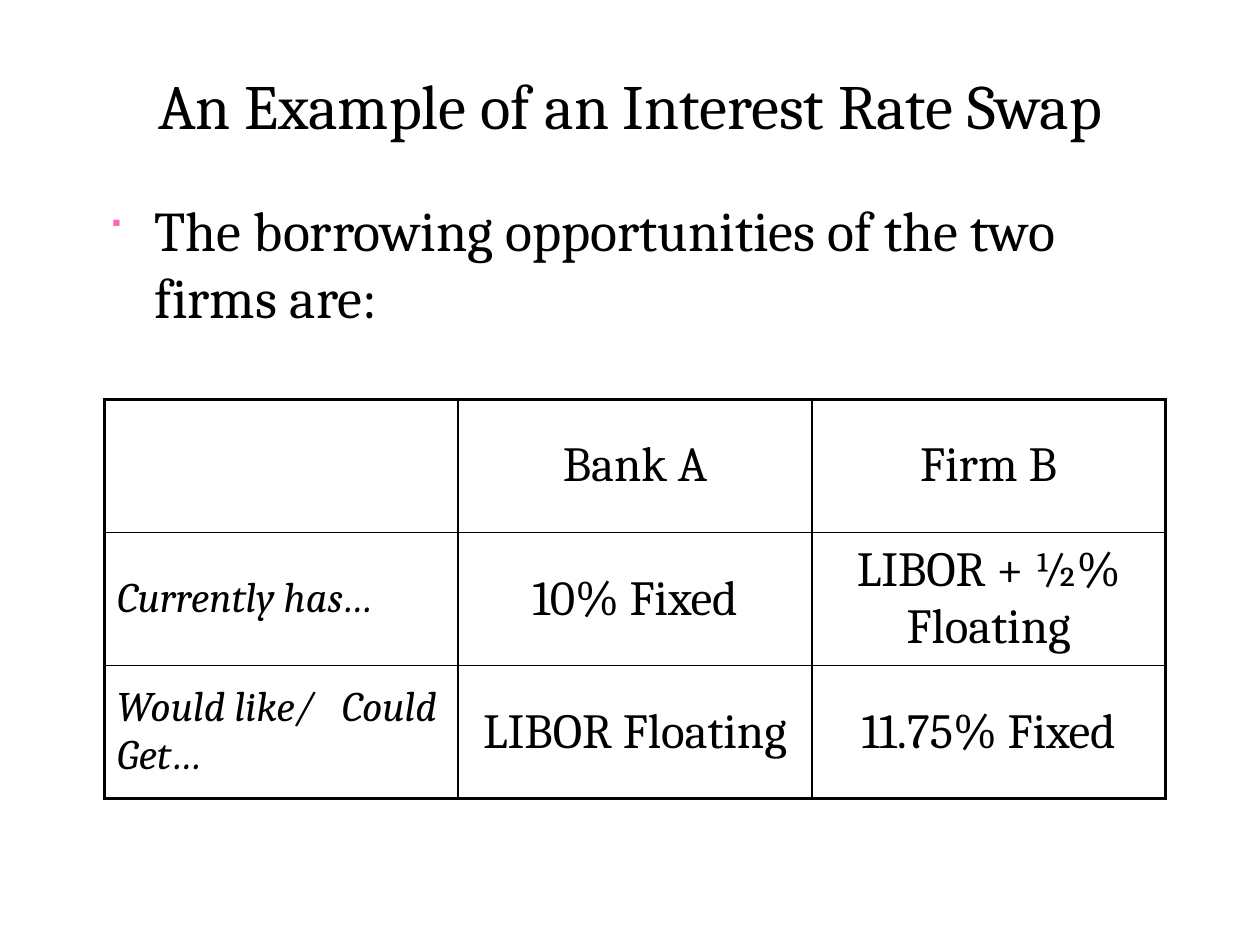
"""Build a slide showing the borrowing opportunities behind an interest rate swap."""
from lxml import etree
from pptx import Presentation
from pptx import util as u
from pptx.dml.color import RGBColor
from pptx.enum import text
from pptx.oxml import ns

COLORS = {"ink": "000000", "bullet": "FF63B1"}
ROWS = [
    ["", "Bank A", "Firm B"],
    ["Currently has…", "10% Fixed", "LIBOR + ½% Floating"],
    ["Would like/   Could Get…", "LIBOR Floating", "11.75% Fixed"],
]


def write(frame, wording, size, align=text.PP_ALIGN.LEFT, italic=False, before=0):
    paragraph = frame.paragraphs[0]
    paragraph.alignment = align
    paragraph.space_before = u.Pt(before)
    run = paragraph.add_run()
    run.text = wording
    run.font.name = "Cambria"
    run.font.size = u.Pt(size)
    run.font.italic = italic
    run.font.color.rgb = RGBColor.from_string(COLORS["ink"])
    return paragraph


def add_element(parent, tag, **attributes):
    return etree.SubElement(parent, ns.qn(tag), attributes)


presentation = Presentation()
presentation.slide_width = u.Inches(10)
presentation.slide_height = u.Inches(7.5)
slide = presentation.slides.add_slide(presentation.slide_layouts[5])

title = slide.shapes.title
title.left, title.top = u.Inches(0.75), u.Inches(0.33)
title.width, title.height = u.Inches(8.5), u.Inches(1)
title.text_frame.vertical_anchor = text.MSO_ANCHOR.MIDDLE
write(title.text_frame, "An Example of an Interest Rate Swap", 36, text.PP_ALIGN.CENTER)

body = slide.shapes.add_textbox(u.Inches(0.75), u.Inches(1.5), u.Inches(8.5), u.Inches(1.25))
body.text_frame.word_wrap = True
paragraph = write(body.text_frame, "The borrowing opportunities of the two firms are:", 32, before=6.4)
properties = paragraph._p.get_or_add_pPr()
properties.set("marL", str(u.Inches(0.38)))
properties.set("indent", str(u.Inches(-0.38)))
bullet_color = add_element(properties, "a:buClr")
add_element(bullet_color, "a:srgbClr", val=COLORS["bullet"])
add_element(properties, "a:buSzPct", val="75000")
add_element(properties, "a:buFont", typeface="Wingdings")
add_element(properties, "a:buChar", char="■")

table_frame = slide.shapes.add_table(
    3, 3, u.Inches(0.83), u.Inches(3.17), u.Inches(8.42), u.Inches(3.17)
)
table = table_frame.table
table.first_row = table.horz_banding = False
for row_index, row in enumerate(ROWS):
    for column_index, wording in enumerate(row):
        cell = table.cell(row_index, column_index)
        cell.vertical_anchor = text.MSO_ANCHOR.MIDDLE
        if wording:
            label = column_index == 0
            size = 24 if label else 28
            align = text.PP_ALIGN.LEFT if label else text.PP_ALIGN.CENTER
            write(cell.text_frame, wording, size, align, label, size * 0.2)
        outer_edges = {
            "a:lnL": column_index == 0,
            "a:lnR": column_index == 2,
            "a:lnT": row_index == 0,
            "a:lnB": row_index == 2,
        }
        for tag, outer in outer_edges.items():
            width = u.Pt(2.25 if outer else 1)
            line = add_element(cell._tc.get_or_add_tcPr(), tag, w=str(width))
            fill = add_element(line, "a:solidFill")
            add_element(fill, "a:srgbClr", val=COLORS["ink"])
        cell.fill.background()

presentation.save("out.pptx")
